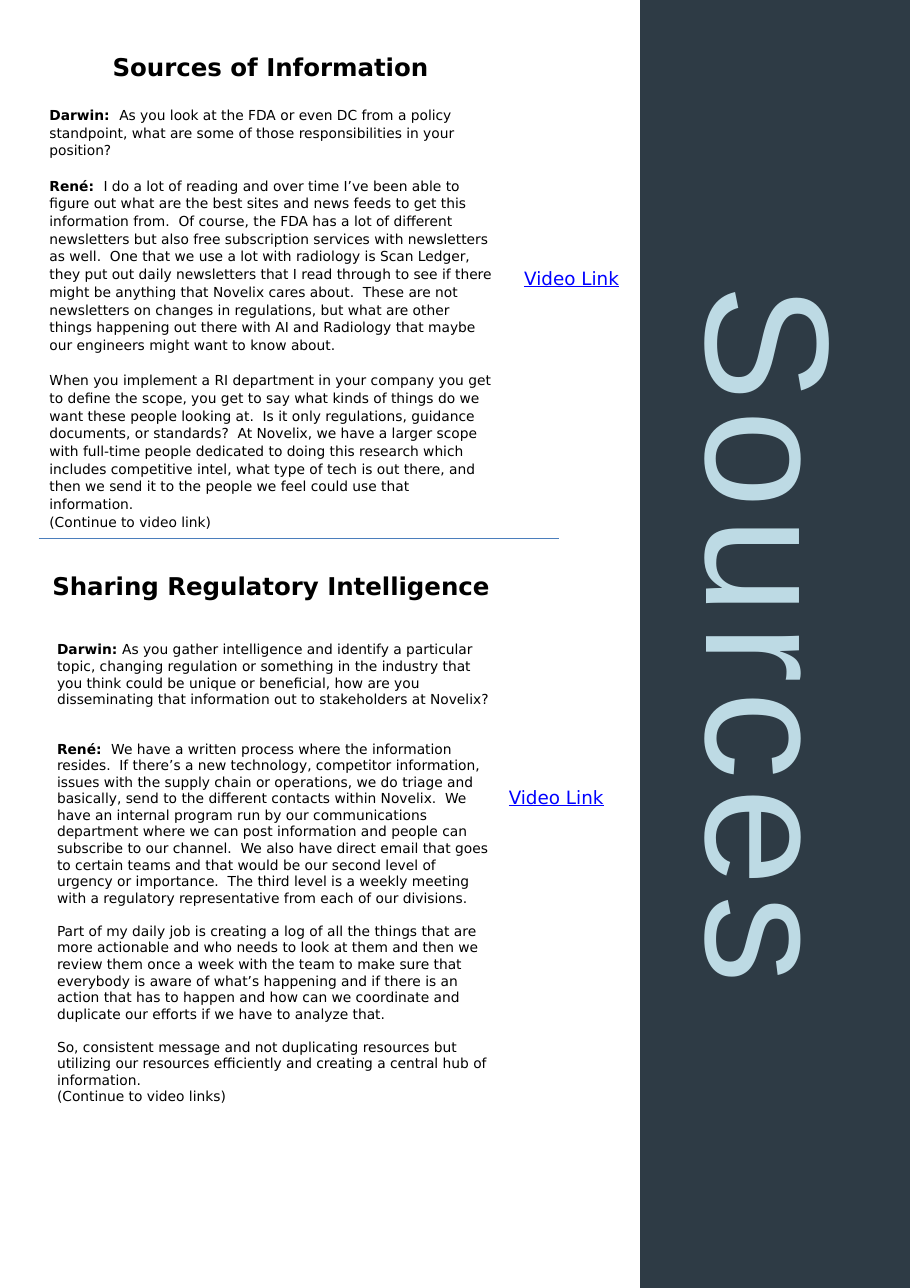
from lxml.etree import SubElement
from pptx import Presentation
from pptx.dml.color import RGBColor
from pptx.enum.shapes import MSO_CONNECTOR, MSO_SHAPE
from pptx.enum.text import MSO_AUTO_SIZE, PP_ALIGN
from pptx.oxml.ns import qn
from pptx.util import Inches, Pt

SLATE = RGBColor(0x2E, 0x3B, 0x45)
PALE_BLUE = RGBColor(0xBD, 0xDA, 0xE4)
RULE_BLUE = RGBColor(0x4B, 0x7E, 0xBC)
LINK_BLUE = RGBColor(0x00, 0x00, 0xFF)
BLACK = RGBColor(0x00, 0x00, 0x00)
WHITE = RGBColor(0xFF, 0xFF, 0xFF)

prs = Presentation()
prs.slide_width, prs.slide_height = Inches(8.26), Inches(11.69)
s = prs.slides.add_slide(prs.slide_layouts[6])
s.background.fill.solid()
s.background.fill.fore_color.rgb = WHITE


def place(left, top, width, height):
    """Turn percentages of the slide's width and height into lengths."""
    w, h = prs.slide_width / 100, prs.slide_height / 100
    return int(left * w), int(top * h), int(width * w), int(height * h)


def add_text(box, paragraphs, size, color=BLACK, font="DejaVu Sans"):
    """Add a text box; each paragraph is a list of (text, bold) runs."""
    tf = s.shapes.add_textbox(*place(*box)).text_frame
    tf.word_wrap = True
    tf.auto_size = MSO_AUTO_SIZE.SHAPE_TO_FIT_TEXT
    for i, runs in enumerate(paragraphs):
        p = tf.paragraphs[0] if i == 0 else tf.add_paragraph()
        for text, bold in runs:
            r = p.add_run()
            r.text = text
            r.font.name, r.font.size, r.font.bold = font, Pt(size), bold
            r.font.color.rgb = color
    return tf


# Sidebar with its vertical title
sidebar = s.shapes.add_shape(MSO_SHAPE.RECTANGLE, *place(70.34, 0, 29.66, 100))
sidebar.shadow.inherit = False
sidebar.fill.solid()
sidebar.fill.fore_color.rgb = SLATE
sidebar.line.fill.background()

tf = add_text((75.18, 1.28, 22.88, 95.89), [[("Sources", False)]], 115, PALE_BLUE, "Arial")
tf.margin_left = tf.margin_right = tf.margin_top = tf.margin_bottom = 0
p = tf.paragraphs[0]
p.alignment = PP_ALIGN.CENTER
p.line_spacing = Pt(144.7)
p.runs[0].font.element.set("spc", "580") if hasattr(p.runs[0].font, "element") else \
    p.runs[0]._r.get_or_add_rPr().set("spc", "580")
tf._txBody.find(qn("a:bodyPr")).set("vert", "vert")

# Rule between the two sections
left, top, width, _ = place(4.24, 41.83, 57.14, 0)
rule = s.shapes.add_connector(MSO_CONNECTOR.STRAIGHT, left, top, left + width, top)
rule.line.color.rgb = RULE_BLUE
rule.line.width = Pt(0.75)
SubElement(rule.element.spPr, qn("a:effectLst"))

# Each paragraph: speaker, words, space after in points
information = [
    ("Darwin:  ", "As you look at the FDA or even DC from a policy standpoint, what are some of "
     "those responsibilities in your position?", 11.5),
    ("René:  ", "I do a lot of reading and over time I’ve been able to figure out what are the "
     "best sites and news feeds to get this information from.  Of course, the FDA has a lot of "
     "different newsletters but also free subscription services with newsletters as well.  One "
     "that we use a lot with radiology is Scan Ledger, they put out daily newsletters that I read "
     "through to see if there might be anything that Novelix cares about.  These are not "
     "newsletters on changes in regulations, but what are other things happening out there with "
     "AI and Radiology that maybe our engineers might want to know about.", 11.5),
    ("", "When you implement a RI department in your company you get to define the scope, you get "
     "to say what kinds of things do we want these people looking at.  Is it only regulations, "
     "guidance documents, or standards?  At Novelix, we have a larger scope with full-time people "
     "dedicated to doing this research which includes competitive intel, what type of tech is out "
     "there, and then we send it to the people we feel could use that information.", 0),
    ("", "(Continue to video link)", 0),
]
sharing = [
    ("Darwin: ", "As you gather intelligence and identify a particular topic, changing regulation "
     "or something in the industry that you think could be unique or beneficial, how are you "
     "disseminating that information out to stakeholders at Novelix?", 21.5),
    ("René:  ", "We have a written process where the information resides.  If there’s a new "
     "technology, competitor information, issues with the supply chain or operations, we do triage "
     "and basically, send to the different contacts within Novelix.  We have an internal program "
     "run by our communications department where we can post information and people can subscribe "
     "to our channel.  We also have direct email that goes to certain teams and that would be our "
     "second level of urgency or importance.  The third level is a weekly meeting with a "
     "regulatory representative from each of our divisions.", 10.8),
    ("", "Part of my daily job is creating a log of all the things that are more actionable and "
     "who needs to look at them and then we review them once a week with the team to make sure "
     "that everybody is aware of what’s happening and if there is an action that has to happen "
     "and how can we coordinate and duplicate our efforts if we have to analyze that.", 10.8),
    ("", "So, consistent message and not duplicating resources but utilizing our resources "
     "efficiently and creating a central hub of information.", 0),
    ("", "(Continue to video links)", 0),
]
sections = [
    ("Sources of Information", (3.27, 3.59, 52.91, 3.17),
     information, (4.24, 7.78, 50.97, 34.05), 1.07, (56.42, 20.36, 14.65, 2.57)),
    ("Sharing Regulatory Intelligence", (0.85, 43.88, 57.87, 3.17),
     sharing, (5.08, 49.36, 50, 37.13), 1.0, (54.72, 60.65, 15.62, 2.57)),
]
for title, title_box, talk, talk_box, spacing, link_box in sections:
    tf = add_text(title_box, [[(title, True)]], 16)
    tf.paragraphs[0].alignment = PP_ALIGN.CENTER

    lines = [[(speaker, True), (words, False)] if speaker else [(words, False)]
             for speaker, words, _ in talk]
    tf = add_text(talk_box, lines, 9)
    for p, (_, _, gap) in zip(tf.paragraphs, talk):
        p.line_spacing = spacing
        p.space_after = Pt(gap)

    tf = add_text(link_box, [[("Video Link", False)]], 12, LINK_BLUE)
    tf.paragraphs[0].runs[0].font.underline = True

prs.save("out.pptx")
